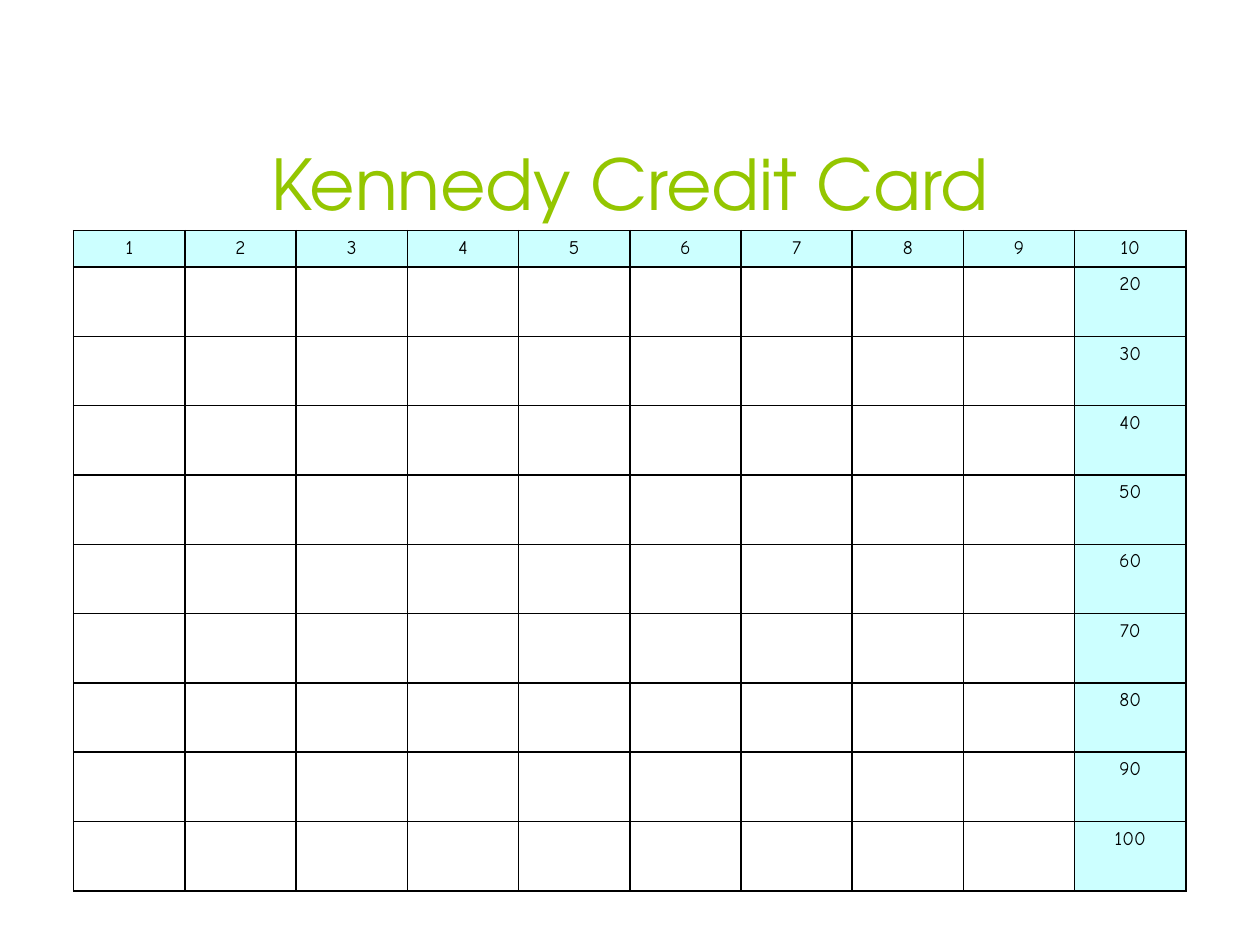
"""Build the Kennedy Credit Card slide: a title above a ten by ten punch grid."""
from dataclasses import dataclass

from lxml import etree
from pptx import Presentation
from pptx.dml.color import RGBColor
from pptx.enum import text
from pptx.oxml import ns
from pptx.util import Inches, Pt


@dataclass(frozen=True)
class Theme:
    title_font: str = "TeX Gyre Adventor"
    number_font: str = "Comic Neue"
    title_size: int = 40
    number_size: int = 11
    title: str = "94C600"
    ink: str = "000000"
    marked: str = "CCFFFF"
    plain: str = "FFFFFF"
    border: int = 1


theme = Theme()


def add_run(p, words, font, size, color):
    p.alignment = text.PP_ALIGN.CENTER
    r = p.add_run()
    r.text = words
    r.font.name, r.font.size = font, Pt(size)
    r.font.color.rgb = RGBColor.from_string(color)


def add_borders(cell):
    tc_pr = cell._tc.get_or_add_tcPr()
    for side in ("a:lnL", "a:lnR", "a:lnT", "a:lnB"):
        ln = etree.SubElement(tc_pr, ns.qn(side), w=str(Pt(theme.border)))
        fill = etree.SubElement(ln, ns.qn("a:solidFill"))
        etree.SubElement(fill, ns.qn("a:srgbClr"), val=theme.ink)


prs = Presentation()
prs.slide_width, prs.slide_height = Inches(10), Inches(7.5)
s = prs.slides.add_slide(prs.slide_layouts[6])

margin, title_top, title_height = Inches(0.5), Inches(0.58), Inches(1.25)
sp = s.shapes.add_textbox(margin, title_top, prs.slide_width - 2 * margin, title_height)
tf = sp.text_frame
tf.word_wrap = True
tf.vertical_anchor = text.MSO_ANCHOR.BOTTOM
add_run(tf.paragraphs[0], "Kennedy Credit Card", theme.title_font, theme.title_size, theme.title)

count = 10
grid_width, head_height, row_height = Inches(8.83), Inches(0.29), Inches(0.55)
grid_height = head_height + (count - 1) * row_height
grid_left = (prs.slide_width - grid_width) // 2
table = s.shapes.add_table(
    count, count, grid_left, title_top + title_height, grid_width, grid_height
).table
table.first_row = table.horz_banding = False
for col in table.columns:
    col.width = grid_width // count
for i, row in enumerate(table.rows):
    row.height = row_height if i else head_height
    for j, cell in enumerate(row.cells):
        add_borders(cell)
        marked = i == 0 or j == count - 1
        cell.fill.solid()
        cell.fill.fore_color.rgb = RGBColor.from_string(theme.marked if marked else theme.plain)
        if marked:
            p = cell.text_frame.paragraphs[0]
            number = str(i * count + j + 1)
            add_run(p, number, theme.number_font, theme.number_size, theme.ink)
            p_pr = p._p.get_or_add_pPr()
            p_pr.set("marL", str(Inches(0.51)))
            p_pr.set("indent", str(Inches(-0.51)))

prs.save("out.pptx")
